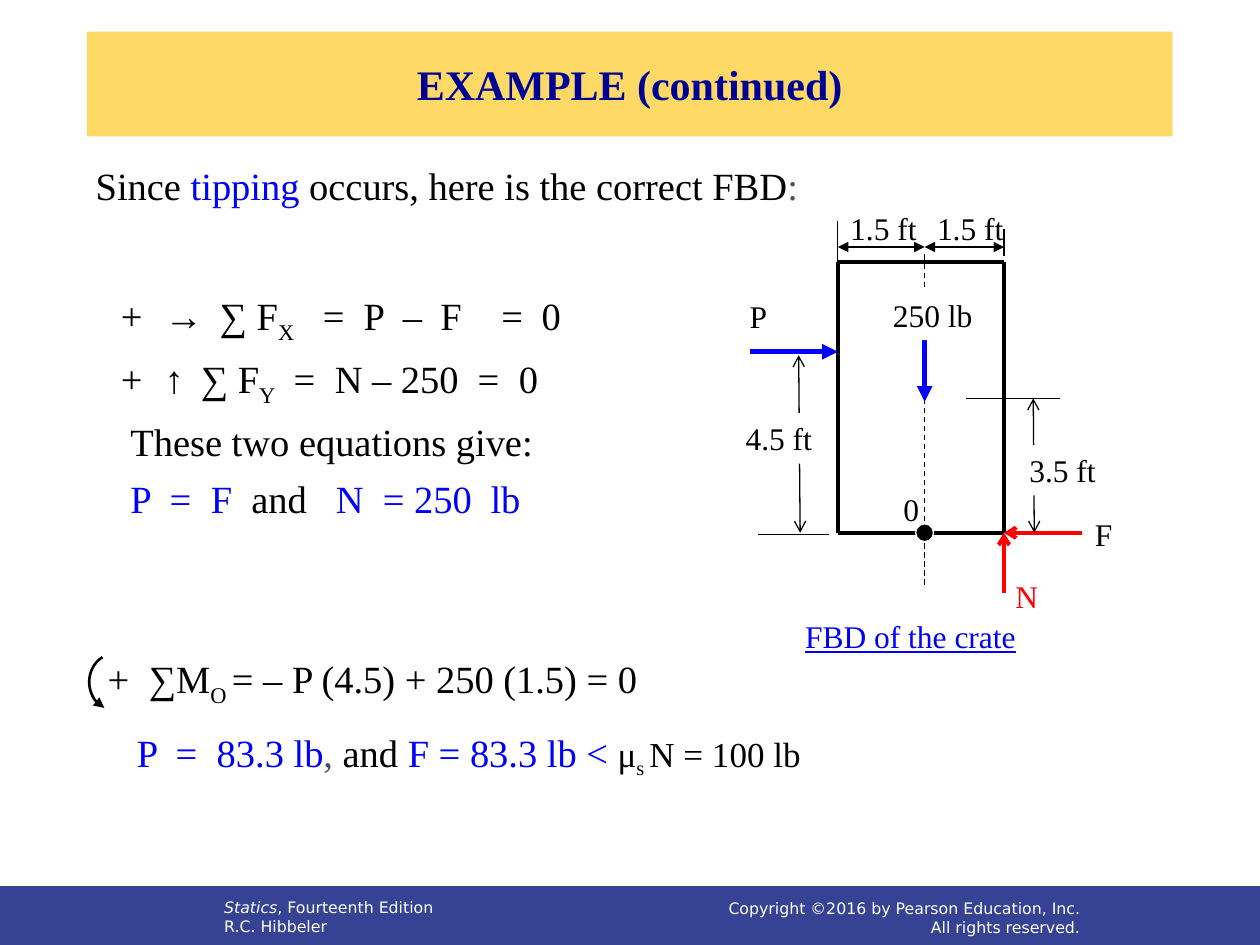
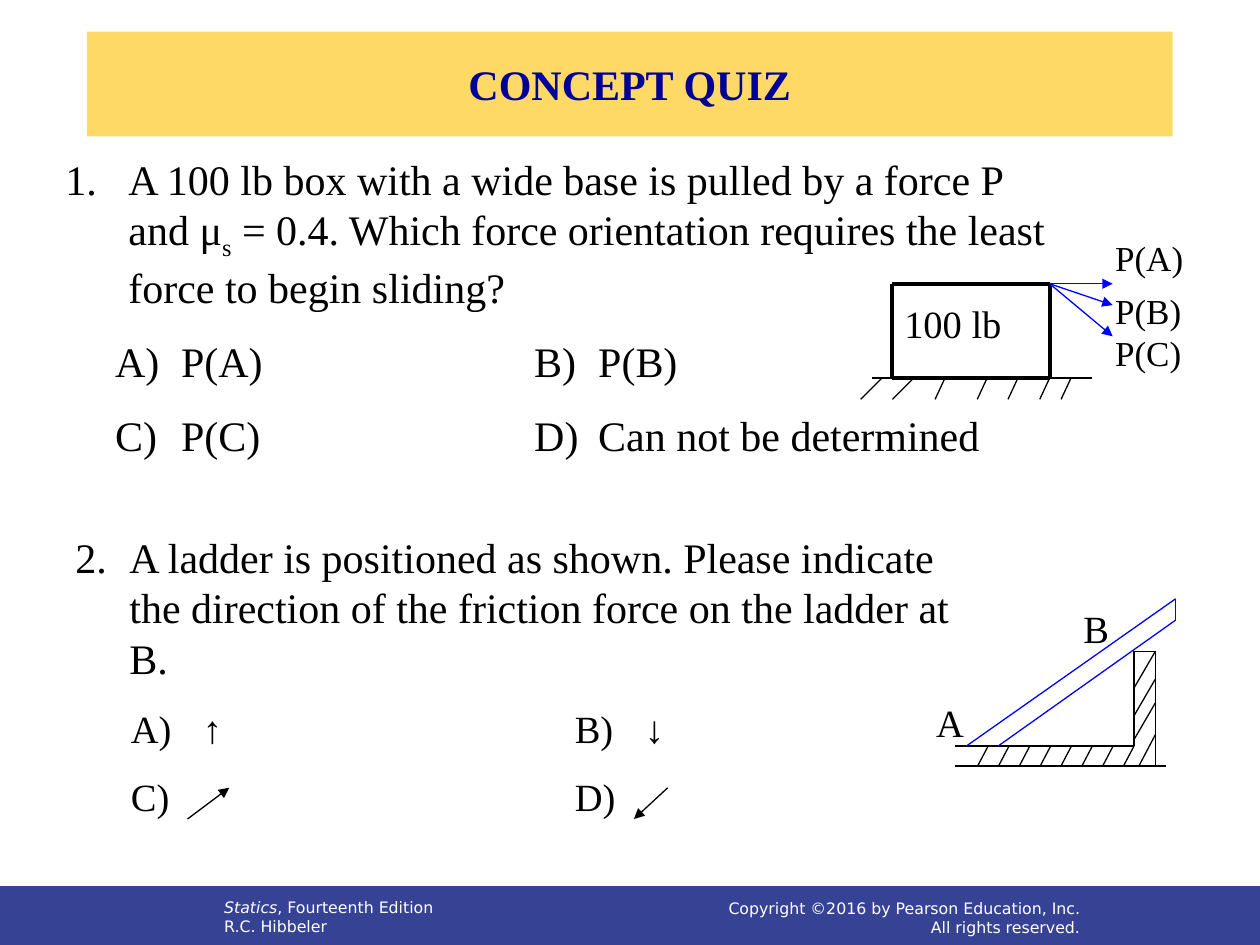
from lxml.etree import SubElement
from pptx import Presentation
from pptx.dml.color import RGBColor as Rgb
from pptx.enum.dml import MSO_LINE_DASH_STYLE as Dash
from pptx.enum.shapes import MSO_CONNECTOR as Connector, MSO_SHAPE as Shape
from pptx.enum.text import MSO_ANCHOR as Anchor, PP_ALIGN as Align
from pptx.oxml.ns import qn
from pptx.util import Cm, Pt

COLORS = {
    "black": "000000", "white": "FFFFFF", "band": "364395", "gold": "FFD966",
    "navy": "000096", "accent": "0000FA", "blue": "0000FF", "red": "FF0000",
    "slate": "44546A",
}
COLORS = {name: Rgb.from_string(value) for name, value in COLORS.items()}


def write(page, text, left, top, width, height, size=18, color="black",
          font="Times New Roman", bold=False, align=Align.LEFT, anchor=Anchor.TOP,
          fill=None, wrap=True, before=0, after=0, hang=0):
    box = page.shapes.add_textbox(Cm(left), Cm(top), Cm(width), Cm(height))
    if fill:
        box.fill.solid()
        box.fill.fore_color.rgb = COLORS[fill]
    frame = box.text_frame
    frame.word_wrap = wrap
    frame.vertical_anchor = anchor
    rows = [([text], [])] if isinstance(text, str) else text
    for number, (spans, stops) in enumerate(rows):
        para = frame.add_paragraph() if number else frame.paragraphs[0]
        props = para._p.get_or_add_pPr()
        if stops:
            tab_list = SubElement(props, qn("a:tabLst"))
            for stop in stops:
                SubElement(tab_list, qn("a:tab"), pos=str(Cm(stop)), algn="l")
        elif hang:
            props.set("marL", str(Cm(hang)))
            props.set("indent", str(-Cm(hang)))
        para.alignment = align
        para.space_before = Pt(before if number else 0)
        para.space_after = Pt(after)
        for part in spans:
            words, style = (part, {}) if isinstance(part, str) else part
            span = para.add_run()
            span.text = words
            span.font.name = font
            span.font.size = Pt(style.get("size", size))
            span.font.bold = bold
            span.font.italic = style.get("italic", False)
            span.font.underline = style.get("underline", False)
            span.font.color.rgb = COLORS[style.get("color", color)]
            if style.get("sub"):
                span.font._element.set("baseline", "-25000")
    return box


def draw(page, start, end, color="black", width=0.75, head=None, tail=None, dash=None):
    line = page.shapes.add_connector(
        Connector.STRAIGHT, Cm(start[0]), Cm(start[1]), Cm(end[0]), Cm(end[1]))
    line.line.color.rgb = COLORS[color]
    line.line.width = Pt(width)
    if dash:
        line.line.dash_style = dash
    outline = line.line._get_or_add_ln()
    for tag, kind in (("a:headEnd", head), ("a:tailEnd", tail)):
        if kind:
            SubElement(outline, qn(tag), type=kind)
    SubElement(line._element.spPr, qn("a:effectLst"))


deck = Presentation()
deck.slide_width, deck.slide_height = Cm(25.4), Cm(19.05)
pages = []
for title in ("EXAMPLE (continued)", "CONCEPT QUIZ"):
    page = deck.slides.add_slide(deck.slide_layouts[6])
    band = page.shapes.add_shape(Shape.RECTANGLE, Cm(-0.03), Cm(17.88), Cm(25.45), Cm(1.19))
    band.shadow.inherit = False
    band.fill.solid()
    band.fill.fore_color.rgb = band.line.color.rgb = COLORS["band"]
    band.line.width = Pt(0.5)
    footer = dict(size=9, color="white", font="DejaVu Sans")
    write(page, [([("Statics", {"italic": True}), ", Fourteenth Edition"], []),
                 (["R.C. Hibbeler"], [])], 4.27, 17.98, 15.65, 1.02, **footer)
    write(page, [(["Copyright ©2016 by Pearson Education, Inc."], []),
                 (["All rights reserved."], [])], 11.86, 17.96, 10.16, 1.09,
          align=Align.RIGHT, anchor=Anchor.MIDDLE, **footer)
    write(page, title, 1.75, 0.64, 21.89, 2.11, size=24, color="navy", bold=True,
          align=Align.CENTER, anchor=Anchor.MIDDLE, fill="gold")
    pages.append(page)
example, quiz = pages

accent, slate, sub = {"color": "accent"}, {"color": "slate"}, {"sub": True}
write(example, [(["Since ", ("tipping ", accent), "occurs, here is the correct FBD",
                  (":", slate)], [])], 1.68, 3.15, 15.21, 1.19, size=22, wrap=False)
write(example, [
    (["\t+\t→\t∑ F", ("X", sub), "\t=\tP\t–\tF\t=\t0"],
     [0.39, 1.27, 2.38, 4.46, 5.28, 6.07, 6.83, 8.06, 8.87]),
    (["\t+\t↑\t∑ F", ("Y", sub), "\t=\tN – 250\t=\t0"],
     [0.39, 1.27, 2.0, 3.87, 4.7, 7.58, 8.41]),
    (["\tThese two equations give:"], [0.58]),
    ([("\tP\t=\tF", accent), "\tand", ("\tN\t= 250\tlb", accent)],
     [0.58, 1.37, 2.2, 3.02, 4.72, 5.67, 7.84]),
], 1.8, 5.77, 14.48, 4.65, size=22, after=6)
write(example, [
    (["\t+\t∑M", ("O ", sub), "= – P (4.5) + 250 (1.5) = 0"], [0.4, 1.23]),
    ([("\tP\t=\t83.3 lb", accent), (", ", slate), "and ", ("F = 83.3 lb < ", accent),
      ("μ", {"size": 20}), ("s ", {"size": 20, "sub": True}),
      ("N = 100 lb", {"size": 20})], [0.99, 1.77, 2.6]),
], 1.52, 13.08, 22.66, 2.64, size=22, after=12)

turn = example.shapes.add_shape(Shape.ARC, Cm(1.8), Cm(13.18), Cm(1.02), Cm(1.14))
turn.shadow.inherit = False
turn.adjustments[0], turn.adjustments[1] = 66.9, 146.54
turn.fill.background()
turn.line.color.rgb = COLORS["black"]
turn.line.width = Pt(1.5)
SubElement(turn.line._get_or_add_ln(), qn("a:headEnd"), type="triangle")

left, middle, right, top, bottom = 16.89, 18.64, 20.24, 5.28, 10.74
for start, end in (((left, top), (left, bottom)), ((left, top), (right, top)),
                   ((right, top), (right, bottom)), ((left, bottom), (right, bottom))):
    draw(example, start, end, width=2.25)
draw(example, (middle, 5.13), (middle, 11.79), dash=Dash.DASH)
draw(example, (middle, 6.86), (middle, 8.1), "blue", 3, tail="triangle")
draw(example, (15.11, 7.09), (left, 7.09), "blue", 3, tail="triangle")
draw(example, (right, 11.96), (right, bottom), "red", 2.25, tail="arrow")
draw(example, (21.82, bottom), (right, bottom), "red", 2.25, tail="arrow")
for start, end in (((left, 4.45), (left, 5.3)), ((right, 4.62), (right, 5.16)),
                   ((15.29, 10.77), (16.71, 10.77)), ((19.48, 8.03), (21.36, 8.03))):
    draw(example, start, end)
for start, end, tip in (((left, 4.98), (middle, 4.98), "triangle"),
                        ((middle, 4.98), (right, 4.98), "triangle"),
                        ((16.1, 7.16), (16.13, bottom), "arrow"),
                        ((20.83, 8.03), (20.85, bottom), "arrow")):
    draw(example, start, end, head=tip, tail=tip)

pivot = example.shapes.add_shape(Shape.OVAL, Cm(18.46), Cm(10.56), Cm(0.36), Cm(0.36))
pivot.shadow.inherit = False
pivot.fill.solid()
pivot.fill.fore_color.rgb = COLORS["black"]
pivot.line.color.rgb = COLORS["white"]
pivot.line.width = Pt(0.75)

for label, x, y, width, style in (
        ("1.5 ft", left, 4.09, 2.54, {}),
        ("1.5 ft", middle, 4.09, 2.36, {}),
        ("250 lb", 17.75, 5.84, 2.26, {"fill": "white"}),
        ("3.5 ft", 20.5, 8.97, 2.67, {"fill": "white"}),
        ("4.5 ft", 14.78, 8.33, 2.03, {"fill": "white"}),
        ("0", 17.96, 9.75, 1.93, {}),
        ("F", 21.82, 10.26, 1.09, {}),
        ("P", 14.86, 5.87, 0.86, {"wrap": False}),
        ("N", 20.22, 11.51, 0.97, {"wrap": False, "color": "red"})):
    write(example, label, x, y, width, 1.02, **style)
write(example, [([("FBD of the crate", {"color": "accent", "underline": True})], [])],
      15.98, 12.32, 7.49, 1.02)

force_stops = [1.0, 2.33, 9.45, 10.74]
write(quiz, [
    (["1.\tA 100 lb box with a wide base is pulled by a force P and μ", ("s", sub),
      " = 0.4. Which force orientation requires the least force to begin sliding?"], []),
    (["\tA)\tP(A)\tB)\tP(B)"], force_stops),
    (["\tC)\tP(C)\tD)\tCan not be determined"], force_stops),
], 1.07, 2.97, 20.32, 6.4, size=24, before=13.5, hang=1.27)

left, right, top, floor = 17.98, 21.16, 5.72, 7.62
draw(quiz, (17.58, floor), (22.02, floor))
for start, end in (((left, top), (left, floor)), ((left, top), (right, top)),
                   ((right, top), (right, floor)), ((left, floor), (right, floor))):
    draw(quiz, start, end, width=2.25)
for label, tip_y, label_y in (("P(A)", top, 4.65), ("P(B)", 6.15, 5.72), ("P(C)", 6.78, 6.55)):
    draw(quiz, (right, top), (22.43, tip_y), "blue", tail="triangle")
    write(quiz, label, 22.23, label_y, 1.88, 1.09, size=20, wrap=False)
for x, slant in ((17.78, 0.43), (18.42, 0.43), (19.05, 0.2), (19.9, 0.2),
                 (20.52, 0.2), (right, 0.2), (21.59, 0.2)):
    draw(quiz, (x, floor), (x - slant, 8.05))
write(quiz, "100 lb", left, 5.92, 2.46, 1.19, size=22)

arrow_stops = [1.12, 2.57, 10.07, 11.48]
small = {"size": 22}
write(quiz, [
    (["2.\tA ladder is positioned as shown. Please indicate the direction of the "
      "friction force on the ladder at B."], []),
    ([("\tA)\t↑\tB)\t↓", small)], arrow_stops),
    ([("\tC)\t\tD)", small)], arrow_stops),
], 1.27, 10.59, 18.42, 6.15, size=24, before=12.5, hang=1.09)
draw(quiz, (3.78, 16.51), (4.62, 15.88), tail="triangle")
draw(quiz, (13.46, 15.88), (12.78, 16.51), tail="triangle")

ground, base, wall_left, wall_right, wall_top = 15.04, 15.44, 22.86, 23.29, 13.13
for start, end in (((19.25, ground), (wall_left, ground)),
                   ((wall_left, wall_top), (wall_left, ground)),
                   ((wall_left, wall_top), (wall_right, wall_top)),
                   ((wall_right, wall_top), (wall_right, base)),
                   ((19.25, base), (23.5, base))):
    draw(quiz, start, end)
for step in range(8):
    x = wall_left - 0.42 * step
    draw(quiz, (x, ground), (x - 0.21, base))
for y in (wall_top, 13.69, 14.17):
    draw(quiz, (wall_right, y), (wall_left, y + 0.74))
draw(quiz, (wall_right, 14.81), (22.96, base))
for start, end in (((20.12, ground), (23.7, 12.5)), ((19.48, ground), (23.7, 12.07)),
                   ((23.7, 12.5), (23.7, 12.07))):
    draw(quiz, start, end, "accent")
write(quiz, "A", 18.62, 13.97, 1.07, 1.19, size=22, wrap=False)
write(quiz, "B", 21.59, 12.07, 1.02, 1.19, size=22, wrap=False)

deck.save("out.pptx")
